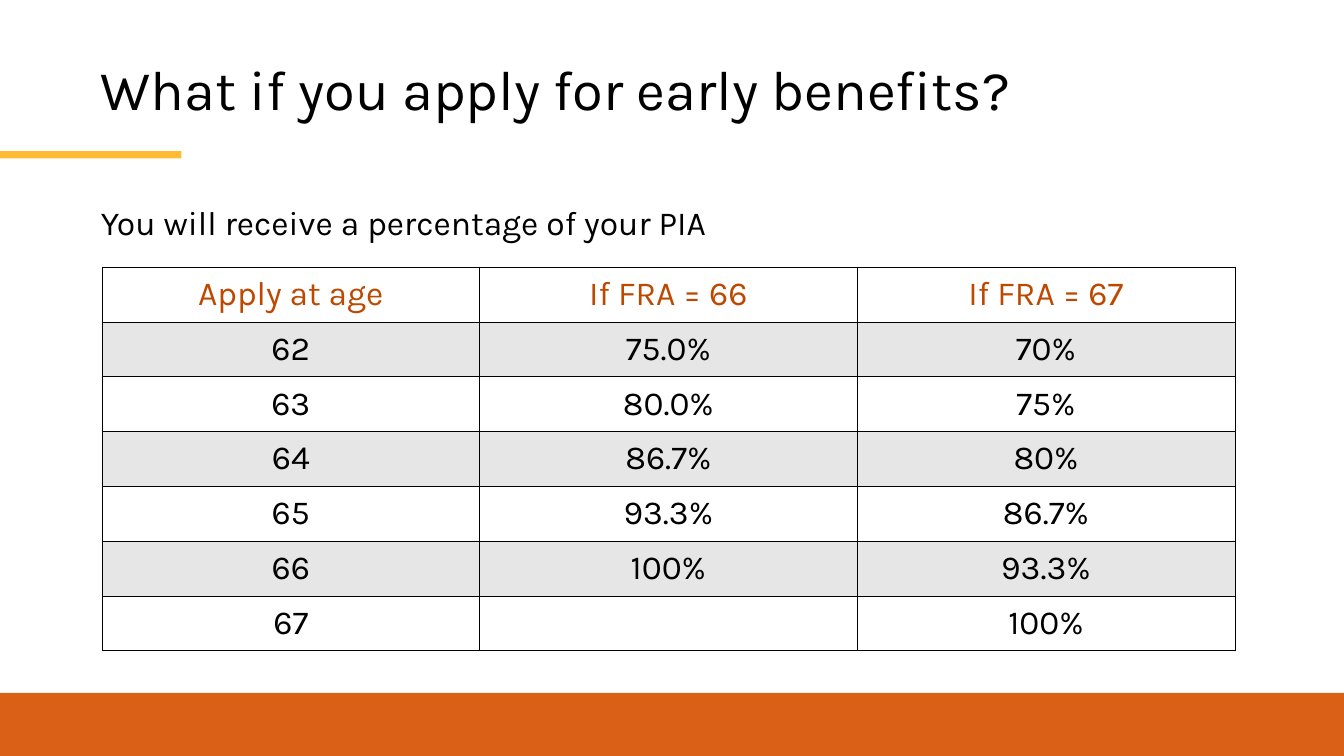
from lxml import etree
from pptx import Presentation
from pptx.dml.color import RGBColor
from pptx.enum.shapes import MSO_SHAPE
from pptx.enum.text import MSO_ANCHOR, PP_ALIGN
from pptx.oxml.ns import qn
from pptx.util import Cm, Pt

RECT = MSO_SHAPE.RECTANGLE
TOP, MIDDLE = MSO_ANCHOR.TOP, MSO_ANCHOR.MIDDLE
CENTER = PP_ALIGN.CENTER

FONT = "Karla"
COLORS = {
    "text": "000000",
    "header": "BD4900",
    "accent": "FFBB33",
    "footer": "D96016",
    "band": "E7E6E6",
}
SLIDE_W, SLIDE_H = 33.87, 19.05
MARGIN = 2.54
BENEFITS = [
    ("Apply at age", "If FRA = 66", "If FRA = 67"),
    ("62", "75.0%", "70%"),
    ("63", "80.0%", "75%"),
    ("64", "86.7%", "80%"),
    ("65", "93.3%", "86.7%"),
    ("66", "100%", "93.3%"),
    ("67", "", "100%"),
]


def rgb(name):
    return RGBColor.from_string(COLORS[name])


def format_runs(p, size, color):
    for r in p.runs:
        r.font.name = FONT
        r.font.size = Pt(size)
        r.font.bold = False
        r.font.color.rgb = rgb(color)


def add_bar(s, x, y, w, h, color):
    sp = s.shapes.add_shape(RECT, Cm(x), Cm(y), Cm(w), Cm(h))
    sp.shadow.inherit = False
    sp.fill.solid()
    sp.fill.fore_color.rgb = rgb(color)
    sp.line.fill.background()


def add_text(s, x, y, w, h, text, size, inset_top=0, spacing=1.0):
    tf = s.shapes.add_textbox(Cm(x), Cm(y), Cm(w), Cm(h)).text_frame
    tf.word_wrap = True
    tf.vertical_anchor = TOP
    tf.margin_left = tf.margin_right = tf.margin_bottom = 0
    tf.margin_top = Cm(inset_top)
    tf.text = text
    p = tf.paragraphs[0]
    p.line_spacing = spacing
    format_runs(p, size, "text")


def add_borders(cell):
    tcPr = cell._tc.get_or_add_tcPr()
    for side in ("a:lnL", "a:lnR", "a:lnT", "a:lnB"):
        ln = etree.SubElement(tcPr, qn(side), w=str(Pt(0.25)))
        fill = etree.SubElement(ln, qn("a:solidFill"))
        etree.SubElement(fill, qn("a:srgbClr"), val=COLORS["text"])


def add_header(s, x, y, w, h):
    add_text(s, x + MARGIN, y + 1.14, w - 2 * MARGIN + 0.34, h - 1.14,
             "What if you apply for early benefits?", 40, 0.43, 0.9)
    add_bar(s, x, y + 3.81, 4.57, 0.18, "accent")


def add_benefits_table(s, x, y, w, h):
    n_rows, n_cols = len(BENEFITS), len(BENEFITS[0])
    table = s.shapes.add_table(n_rows, n_cols, Cm(x), Cm(y), Cm(w), Cm(h)).table
    table.first_row = table.horz_banding = False
    for row in table.rows:
        row.height = Cm(h / n_rows)
    for i, values in enumerate(BENEFITS):
        for j, value in enumerate(values):
            cell = table.cell(i, j)
            add_borders(cell)
            if i % 2:
                cell.fill.solid()
                cell.fill.fore_color.rgb = rgb("band")
            else:
                cell.fill.background()
            cell.vertical_anchor = MIDDLE
            cell.margin_left = cell.margin_right = Cm(0.3 if j else 0)
            cell.margin_top = cell.margin_bottom = Cm(0.15 if j else 0)
            p = cell.text_frame.paragraphs[0]
            p.text = value
            p.alignment = CENTER
            format_runs(p, 24, "text" if i else "header")


def add_body(s, x, y, w, h):
    add_text(s, x, y, w, 1.02, "You will receive a percentage of your PIA", 24)
    add_benefits_table(s, x + 0.03, y + 1.65, w - 0.05, h - 1.65)


def add_footer(s, x, y, w, h):
    add_bar(s, x, y, w, h, "footer")


def main():
    prs = Presentation()
    prs.slide_width, prs.slide_height = Cm(SLIDE_W), Cm(SLIDE_H)
    s = prs.slides.add_slide(prs.slide_layouts[6])
    add_footer(s, 0, 17.46, SLIDE_W, SLIDE_H - 17.46)
    add_header(s, 0, 0, SLIDE_W, 4.45)
    add_body(s, MARGIN, 5.08, 28.6, 11.31)
    prs.save("out.pptx")


if __name__ == "__main__":
    main()
